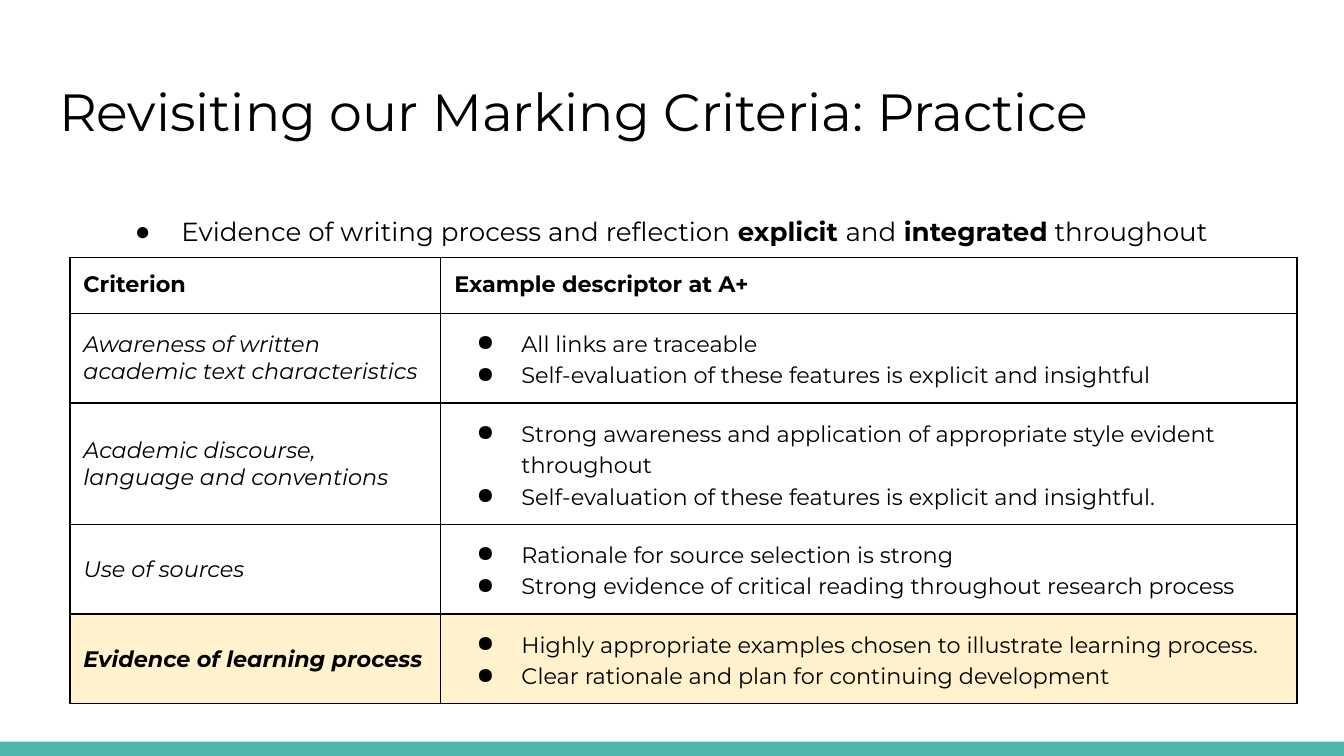
from dataclasses import dataclass

from lxml.etree import SubElement
from pptx import Presentation
from pptx.dml.color import RGBColor as RGB
from pptx.enum.shapes import MSO_SHAPE as SHAPE
from pptx.enum.text import MSO_ANCHOR as ANCHOR, MSO_AUTO_SIZE as AUTO_SIZE, PP_ALIGN as ALIGN
from pptx.oxml.ns import qn
from pptx.util import Pt


@dataclass(frozen=True)
class Theme:
    font: str = "Montserrat"
    ink: str = "000000"
    accent: str = "4DB6AC"
    highlight: str = "FFF2CC"
    title_size: float = 28
    lead_size: float = 14
    table_size: float = 12
    border: float = 0.75
    inset: float = 7.2


THEME = Theme()

TITLE = "Revisiting our Marking Criteria: Practice"
LEAD = [
    ("Evidence of writing process and reflection ", False),
    ("explicit ", True),
    ("and", False),
    (" integrated", True),
    (" throughout", False),
]
HEADINGS = ("Criterion", "Example descriptor at A+")
CRITERIA = [
    ("Awareness of written academic text characteristics",
     ["All links are traceable",
      "Self-evaluation of these features is explicit and insightful"]),
    ("Academic discourse, language and conventions",
     ["Strong awareness and application of appropriate style evident throughout",
      "Self-evaluation of these features is explicit and insightful."]),
    ("Use of sources",
     ["Rationale for source selection is strong",
      "Strong evidence of critical reading throughout research process"]),
    ("Evidence of learning process",
     ["Highly appropriate examples chosen to illustrate learning process.",
      "Clear rationale and plan for continuing development"]),
]
COLUMN_WIDTHS = (198.72, 458.64)
ROW_HEIGHTS = (30, 48, 65, 48, 48)


def apply(target, formats):
    for name, value in formats.items():
        setattr(target, name, value)


def write(paragraph, text, size, bold=False, italic=False):
    run = paragraph.add_run()
    run.text = text
    apply(run.font, {"name": THEME.font, "size": Pt(size), "bold": bold, "italic": italic})
    run.font.color.rgb = RGB.from_string(THEME.ink)


def add_bullet(paragraph, hanging, spacing):
    properties = paragraph._p.get_or_add_pPr()
    properties.set("marL", str(Pt(36)))
    properties.set("indent", str(-Pt(hanging)))
    colour = SubElement(properties, qn("a:buClr"))
    SubElement(colour, qn("a:srgbClr"), val=THEME.ink)
    SubElement(properties, qn("a:buChar"), char="●")
    apply(paragraph, {"line_spacing": spacing, "space_before": Pt(0)})


def place(placeholder, left, top, width, height):
    apply(placeholder, {"left": Pt(left), "top": Pt(top),
                        "width": Pt(width), "height": Pt(height)})
    frame = placeholder.text_frame
    apply(frame, {"word_wrap": True, "auto_size": AUTO_SIZE.NONE, "vertical_anchor": ANCHOR.TOP})
    apply(frame, {f"margin_{side}": Pt(THEME.inset) for side in ("left", "right", "top", "bottom")})
    paragraph = frame.paragraphs[0]
    paragraph.alignment = ALIGN.LEFT
    return paragraph


def add_footer_bar(slide):
    bar = slide.shapes.add_shape(SHAPE.RECTANGLE, 0, Pt(397.4), Pt(720), Pt(7.6))
    bar.shadow.inherit = False
    bar.fill.solid()
    bar.fill.fore_color.rgb = RGB.from_string(THEME.accent)
    bar.line.fill.background()


def format_cell(cell, fill):
    properties = cell._tc.get_or_add_tcPr()
    for edge in ("lnL", "lnR", "lnT", "lnB"):
        line = SubElement(properties, qn(f"a:{edge}"), w=str(Pt(THEME.border)))
        SubElement(SubElement(line, qn("a:solidFill")), qn("a:srgbClr"), val=THEME.ink)
    if fill:
        cell.fill.solid()
        cell.fill.fore_color.rgb = RGB.from_string(fill)
    else:
        cell.fill.background()
    apply(cell, {f"margin_{side}": Pt(THEME.inset) for side in ("left", "right", "top", "bottom")})


def fill_criterion(cells, criterion, descriptors, highlighted):
    name_cell, descriptor_cell = cells
    for cell in cells:
        format_cell(cell, THEME.highlight if highlighted else None)
    name_cell.vertical_anchor = ANCHOR.MIDDLE
    write(name_cell.text_frame.paragraphs[0], criterion, THEME.table_size, highlighted, True)
    frame = descriptor_cell.text_frame
    for index, descriptor in enumerate(descriptors):
        paragraph = frame.add_paragraph() if index else frame.paragraphs[0]
        add_bullet(paragraph, 24, 1.15)
        write(paragraph, descriptor, THEME.table_size)


def add_criteria_table(slide):
    table = slide.shapes.add_table(
        len(ROW_HEIGHTS), len(COLUMN_WIDTHS), Pt(37.44), Pt(137.8),
        Pt(sum(COLUMN_WIDTHS)), Pt(sum(ROW_HEIGHTS))).table
    apply(table, {"first_row": False, "horz_banding": False})
    for column, width in zip(table.columns, COLUMN_WIDTHS):
        column.width = Pt(width)
    for row, height in zip(table.rows, ROW_HEIGHTS):
        row.height = Pt(height)
    header, *body = [list(row.cells) for row in table.rows]
    for cell, heading in zip(header, HEADINGS):
        format_cell(cell, None)
        write(cell.text_frame.paragraphs[0], heading, THEME.table_size, bold=True)
    for cells, (criterion, descriptors) in zip(body, CRITERIA):
        fill_criterion(cells, criterion, descriptors, cells is body[-1])


def main():
    deck = Presentation()
    apply(deck, {"slide_width": Pt(720), "slide_height": Pt(405)})
    slide = deck.slides.add_slide(deck.slide_layouts[1])
    add_footer_bar(slide)
    title = place(slide.shapes.title, 24.5, 35.3, 671, 45.4)
    write(title, TITLE, THEME.title_size)
    add_criteria_table(slide)
    lead = place(slide.placeholders[1], 54, 100, 612.7, 36)
    add_bullet(lead, 25, 1.5)
    for text, bold in LEAD:
        write(lead, text, THEME.lead_size, bold)
    deck.save("out.pptx")


if __name__ == "__main__":
    main()
